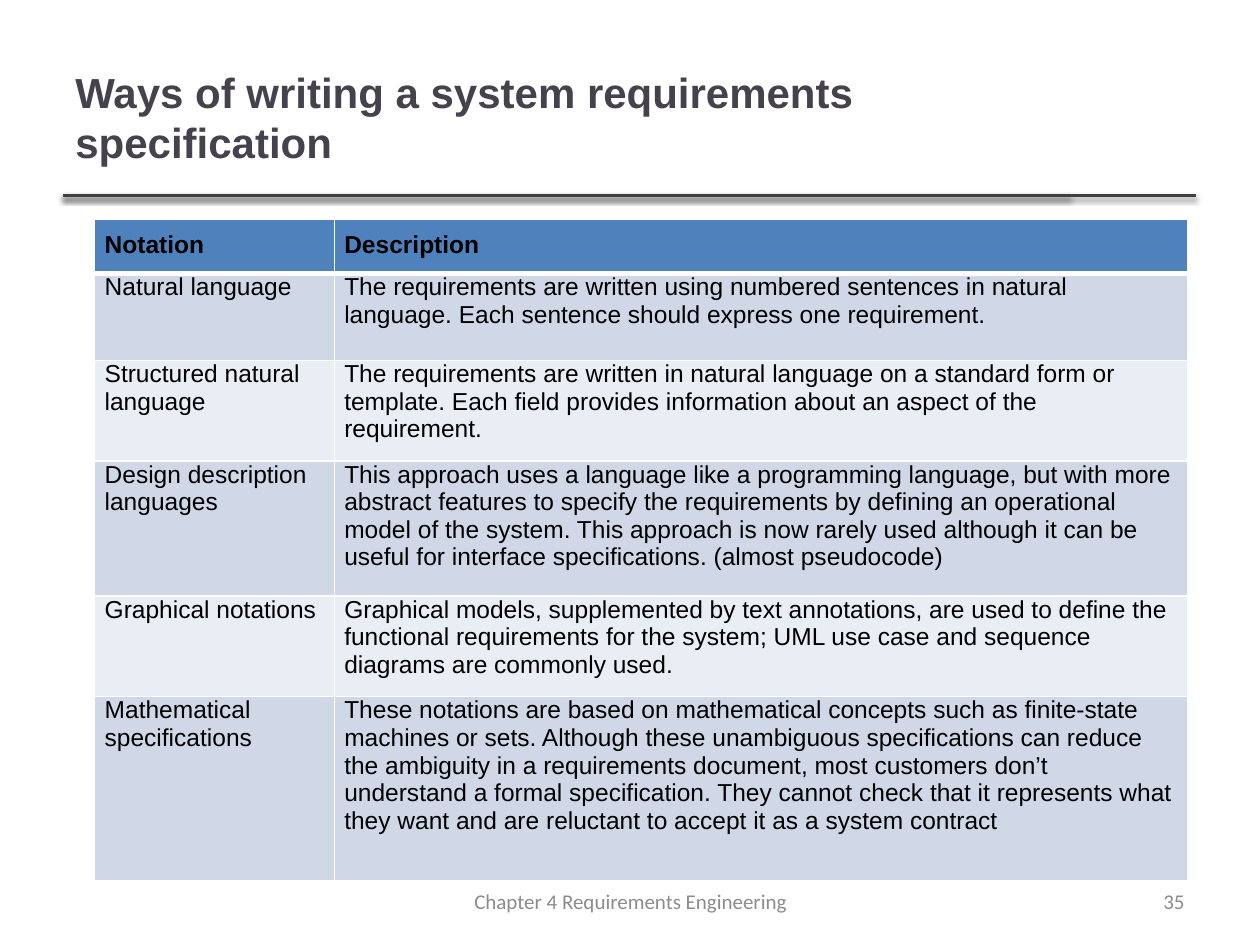
from lxml.etree import SubElement
from pptx import Presentation
from pptx.dml.color import RGBColor
from pptx.enum.shapes import MSO_CONNECTOR
from pptx.enum.text import MSO_ANCHOR, PP_ALIGN
from pptx.oxml.ns import qn
from pptx.util import Cm, Pt

COLORS = {
    "title": "46424D",
    "rule": "404040",
    "shadow": "000000",
    "footer": "8C8C8C",
    "text": "000000",
    "header": "4F81BD",
    "odd_row": "D0D8E8",
    "even_row": "E9EDF4",
    "border": "FFFFFF",
}

COLUMN_WIDTHS = [4.83, 17.2]
ROW_HEIGHTS = [1.02, 1.75, 1.75, 2.72, 1.75, 3.71]
ROWS = [
    ("Notation", "Description"),
    ("Natural language",
     "The requirements are written using numbered sentences in natural language. "
     "Each sentence should express one requirement."),
    ("Structured natural language",
     "The requirements are written in natural language on a standard form or template. "
     "Each field provides information about an aspect of the requirement."),
    ("Design description languages",
     "This approach uses a language like a programming language, but with more abstract "
     "features to specify the requirements by defining an operational model of the system. "
     "This approach is now rarely used although it can be useful for interface "
     "specifications. (almost pseudocode)"),
    ("Graphical notations",
     "Graphical models, supplemented by text annotations, are used to define the functional "
     "requirements for the system; UML use case and sequence diagrams are commonly used."),
    ("Mathematical specifications",
     "These notations are based on mathematical concepts such as finite-state machines or "
     "sets. Although these unambiguous specifications can reduce the ambiguity in a "
     "requirements document, most customers don’t understand a formal specification. They "
     "cannot check that it represents what they want and are reluctant to accept it as a "
     "system contract"),
]
JUSTIFIED_CELLS = {(0, 1), (1, 0)}


def rgb(name):
    return RGBColor.from_string(COLORS[name])


class SlideBuilder:
    heading_font = "Arial"
    footer_font = "Calibri"

    def __init__(self, slide):
        self.slide = slide

    def format_text(self, text_frame, font, size, color, bold=False, align=PP_ALIGN.LEFT):
        for paragraph in text_frame.paragraphs:
            paragraph.alignment = align
            for run in paragraph.runs:
                run.font.name = font
                run.font.size = Pt(size)
                run.font.bold = bold
                run.font.color.rgb = rgb(color)

    def text(self, text, left, top, width, height, **style):
        box = self.slide.shapes.add_textbox(Cm(left), Cm(top), Cm(width), Cm(height))
        text_frame = box.text_frame
        text_frame.word_wrap = True
        text_frame.vertical_anchor = MSO_ANCHOR.MIDDLE
        text_frame.text = text
        self.format_text(text_frame, **style)

    def rule(self, left, right, top):
        line = self.slide.shapes.add_connector(
            MSO_CONNECTOR.STRAIGHT, Cm(left), Cm(top), Cm(right), Cm(top))
        line.line.color.rgb = rgb("rule")
        line.line.width = Pt(2)
        # Soft shadow straight below the line
        effects = SubElement(line._element.spPr, qn("a:effectLst"))
        shadow = SubElement(effects, qn("a:outerShdw"), blurRad=str(Pt(3.1)),
                            dist=str(Pt(1.6)), dir="5400000", rotWithShape="0")
        color = SubElement(shadow, qn("a:srgbClr"), val=COLORS["shadow"])
        SubElement(color, qn("a:alpha"), val="38000")

    def borders(self, cell, widths):
        properties = cell._tc.get_or_add_tcPr()
        for position, (side, width) in enumerate(widths.items()):
            line = properties.makeelement(qn(f"a:ln{side}"), {"w": str(Pt(width))})
            fill = SubElement(line, qn("a:solidFill"))
            SubElement(fill, qn("a:srgbClr"), val=COLORS["border"])
            properties.insert(position, line)

    def table(self, rows, left, top, column_widths, row_heights):
        table = self.slide.shapes.add_table(
            len(rows), len(column_widths), Cm(left), Cm(top),
            Cm(sum(column_widths)), Cm(sum(row_heights))).table
        for column, width in zip(table.columns, column_widths):
            column.width = Cm(width)
        for row, height in zip(table.rows, row_heights):
            row.height = Cm(height)
        for row_index, texts in enumerate(rows):
            for column_index, text in enumerate(texts):
                self.cell(table.cell(row_index, column_index), text, row_index,
                          (row_index, column_index) in JUSTIFIED_CELLS)

    def cell(self, cell, text, row_index, justified):
        is_header = row_index == 0
        cell.margin_left = cell.margin_right = Cm(0.2)
        cell.margin_top = Cm(0.25 if is_header else 0)
        cell.margin_bottom = Cm(0.25)
        cell.text_frame.text = text
        self.format_text(cell.text_frame, self.heading_font, 14, "text", bold=is_header,
                         align=PP_ALIGN.JUSTIFY if justified else PP_ALIGN.LEFT)
        band = "odd_row" if row_index % 2 else "even_row"
        cell.fill.solid()
        cell.fill.fore_color.rgb = rgb("header" if is_header else band)
        self.borders(cell, {"L": 1, "R": 1, "T": 3 if row_index == 1 else 1,
                            "B": 3 if is_header else 1})


def main():
    presentation = Presentation()
    presentation.slide_width = Cm(25.4)
    presentation.slide_height = Cm(19.05)
    slide = presentation.slides.add_slide(presentation.slide_layouts[6])
    builder = SlideBuilder(slide)

    # Double rule under the title
    for right in (21.56, 24.1):
        builder.rule(1.27, right, 3.94)

    # Title
    builder.text("Ways of writing a system requirements specification",
                 1.27, 0.76, 20.27, 3.18,
                 font=builder.heading_font, size=24, color="title", bold=True)

    # Footer and slide number
    footer = {"font": builder.footer_font, "size": 12, "color": "footer"}
    builder.text("Chapter 4 Requirements Engineering", 8.69, 17.65, 8.05, 1.02,
                 align=PP_ALIGN.CENTER, **footer)
    builder.text("35", 18.21, 17.65, 5.92, 1.02, align=PP_ALIGN.RIGHT, **footer)

    # Notation table
    builder.table(ROWS, 1.91, 4.42, COLUMN_WIDTHS, ROW_HEIGHTS)

    presentation.save("out.pptx")


if __name__ == "__main__":
    main()
